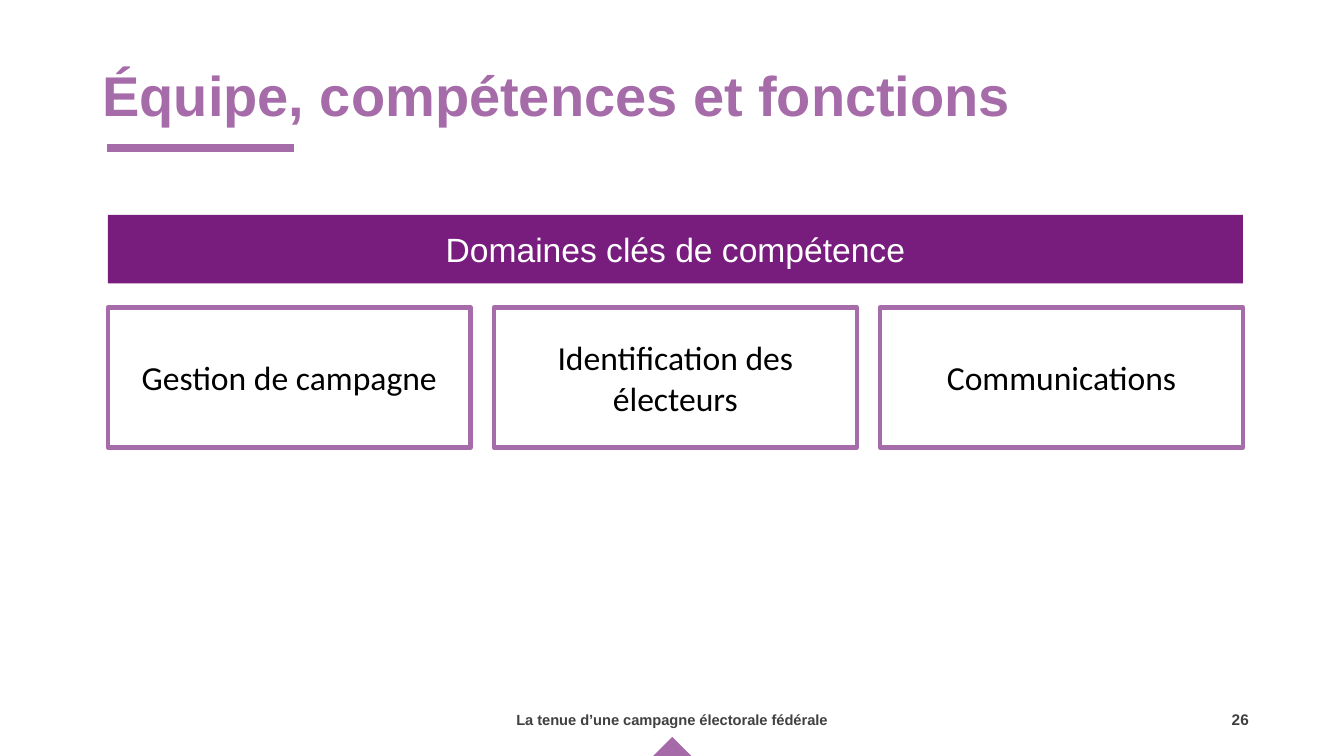
import pptx
import pptx.util
import pptx.dml.color
import pptx.enum.shapes
import pptx.enum.text
import pptx.oxml.ns
from lxml import etree

Pt = pptx.util.Pt
SHAPE = pptx.enum.shapes.MSO_SHAPE
ALIGN = pptx.enum.text.PP_ALIGN
ANCHOR = pptx.enum.text.MSO_ANCHOR
qn = pptx.oxml.ns.qn

PURPLE, MAUVE, GREY = "781D7D", "A66BA9", "404040"


def color(value):
    return pptx.dml.color.RGBColor.from_string(value)


def write(s, text, size, ink, font="Arial", bold=False, align=ALIGN.CENTER, anchor=ANCHOR.MIDDLE):
    tf = s.text_frame
    tf.word_wrap = True
    tf.vertical_anchor = anchor
    p = tf.paragraphs[0]
    p.text = text
    p.alignment = align
    r = p.runs[0]
    r.font.name, r.font.size, r.font.bold = font, Pt(size), bold
    r.font.color.rgb = color(ink)


prs = pptx.Presentation()
prs.slide_width, prs.slide_height = Pt(960), Pt(540)
slide = prs.slides.add_slide(prs.slide_layouts[6])
shapes = slide.shapes

# Footer: page number, course name and triangle
page = shapes.add_textbox(Pt(853.2), Pt(504), Pt(65.5), Pt(20.9))
write(page, "26", 11, GREY, bold=True, anchor=ANCHOR.TOP)
footer = shapes.add_textbox(Pt(318.2), Pt(499.7), Pt(324), Pt(28.8))
write(footer, "La tenue d’une campagne électorale fédérale", 10.5, GREY, bold=True)

triangle = shapes.add_shape(SHAPE.ISOSCELES_TRIANGLE, Pt(465.8), Pt(526.3), Pt(28.8), Pt(14.4))
triangle.shadow.inherit = False
triangle.fill.solid()
triangle.fill.fore_color.rgb = color(PURPLE)
triangle.line.fill.background()
tint = triangle._element.spPr.find(".//" + qn("a:srgbClr"))
etree.SubElement(tint, qn("a:alpha"), val="66000")

# Title and its underline
rule = shapes.add_connector(pptx.enum.shapes.MSO_CONNECTOR.STRAIGHT,
                            Pt(76.3), Pt(105.8), Pt(210.2), Pt(105.8))
rule.line.color.rgb = color(MAUVE)
rule.line.width = Pt(6)
etree.SubElement(rule._element.spPr, qn("a:effectLst"))

title = shapes.add_textbox(Pt(66.2), Pt(28.8), Pt(828), Pt(82.8))
write(title, "Équipe, compétences et fonctions", 40, MAUVE, bold=True, align=ALIGN.LEFT)
title.text_frame.paragraphs[0].line_spacing = 0.9

# Heading band
left, width, gap = 77, 810.8, 16.6
band = shapes.add_shape(SHAPE.RECTANGLE, Pt(left), Pt(153.4), Pt(width), Pt(49))
band.shadow.inherit = False
band.fill.solid()
band.fill.fore_color.rgb = color(PURPLE)
band.line.fill.background()
write(band, "Domaines clés de compétence", 24, "FFFFFF")

# Three areas of competence, evenly spread under the band
areas = ["Gestion de campagne", "Identification des électeurs", "Communications"]
box_width = (width - gap * (len(areas) - 1)) / len(areas)
for i, area in enumerate(areas):
    box = shapes.add_shape(SHAPE.RECTANGLE, Pt(left + i * (box_width + gap)), Pt(219.6),
                           Pt(box_width), Pt(100.1))
    box.shadow.inherit = False
    box.fill.background()
    box.line.color.rgb = color(MAUVE)
    box.line.width = Pt(3)
    write(box, area, 24, "000000", font="Calibri")

prs.save("out.pptx")
